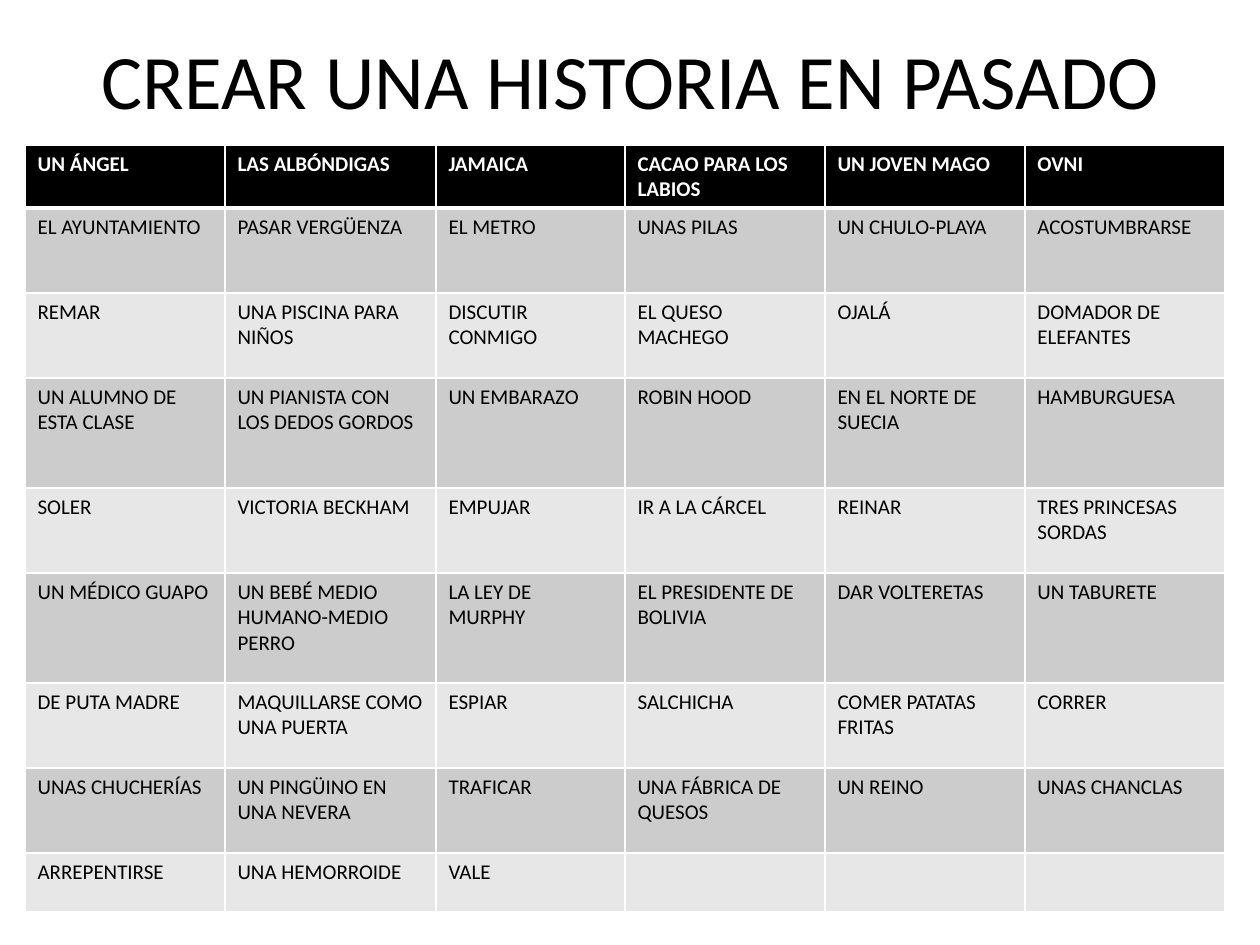
import pptx
import pptx.dml.color
import pptx.enum.text
import pptx.oxml
import pptx.oxml.ns
import pptx.util

PX = 914400 / 126
FONT = "Calibri"
BLACK, WHITE = "000000", "FFFFFF"
BANDS = ["CCCCCC", "E7E7E7"]
COLS = [200, 211, 189, 200, 200, 200]
ROWS = [59, 85, 85, 110, 85, 110, 85, 85, 59]
WORDS = [
    ["UN ÁNGEL", "LAS ALBÓNDIGAS", "JAMAICA",
     "CACAO PARA LOS LABIOS", "UN JOVEN MAGO", "OVNI"],
    ["EL AYUNTAMIENTO", "PASAR VERGÜENZA", "EL METRO",
     "UNAS PILAS", "UN CHULO-PLAYA", "ACOSTUMBRARSE"],
    ["REMAR", "UNA PISCINA PARA NIÑOS", "DISCUTIR CONMIGO",
     "EL QUESO MACHEGO", "OJALÁ", "DOMADOR DE ELEFANTES"],
    ["UN ALUMNO DE ESTA CLASE", "UN PIANISTA CON LOS DEDOS GORDOS", "UN EMBARAZO",
     "ROBIN HOOD", "EN EL NORTE DE SUECIA", "HAMBURGUESA"],
    ["SOLER", "VICTORIA BECKHAM", "EMPUJAR",
     "IR A LA CÁRCEL", "REINAR", "TRES PRINCESAS SORDAS"],
    ["UN MÉDICO GUAPO", "UN BEBÉ MEDIO HUMANO-MEDIO PERRO", "LA LEY DE MURPHY",
     "EL PRESIDENTE DE BOLIVIA", "DAR VOLTERETAS", "UN TABURETE"],
    ["DE PUTA MADRE", "MAQUILLARSE COMO UNA PUERTA", "ESPIAR",
     "SALCHICHA", "COMER PATATAS FRITAS", "CORRER"],
    ["UNAS CHUCHERÍAS", "UN PINGÜINO EN UNA NEVERA", "TRAFICAR",
     "UNA FÁBRICA DE QUESOS", "UN REINO", "UNAS CHANCLAS"],
    ["ARREPENTIRSE", "UNA HEMORROIDE", "VALE", "", "", ""],
]


def emu(px):
    return pptx.util.Emu(round(px * PX))


def rgb(code):
    return pptx.dml.color.RGBColor.from_string(code)


def style(para, size, color, bold=False):
    font = para.font if not para.runs else para.runs[0].font
    font.name = FONT
    font.size = pptx.util.Pt(size)
    font.bold = bold
    font.color.rgb = rgb(color)


def edge(cell, side, width):
    # Borders must come before the fill inside the cell properties
    props = cell._tc.get_or_add_tcPr()
    line = pptx.oxml.parse_xml(
        f'<a:ln{side} {pptx.oxml.ns.nsdecls("a")} w="{pptx.util.Pt(width)}">'
        f'<a:solidFill><a:srgbClr val="{WHITE}"/></a:solidFill></a:ln{side}>')
    props.append(line)


# Heading across the top
def title(slide, left, top, width, height):
    box = slide.shapes.add_textbox(emu(left), emu(top), emu(width), emu(height))
    frame = box.text_frame
    frame.word_wrap = True
    frame.vertical_anchor = pptx.enum.text.MSO_ANCHOR.MIDDLE
    frame.text = "CREAR UNA HISTORIA EN PASADO"
    para = frame.paragraphs[0]
    para.alignment = pptx.enum.text.PP_ALIGN.CENTER
    style(para, 44, BLACK)


# Table of story prompts
def grid(slide, left, top):
    frame = slide.shapes.add_table(len(ROWS), len(COLS), emu(left), emu(top),
                                   emu(sum(COLS)), emu(sum(ROWS)))
    table = frame.table
    for col, width in zip(table.columns, COLS):
        col.width = emu(width)
    for r, (row, height, words) in enumerate(zip(table.rows, ROWS, WORDS)):
        row.height = emu(height)
        head = r == 0
        for cell, word in zip(row.cells, words):
            cell.text = word
            style(cell.text_frame.paragraphs[0], 12, WHITE if head else BLACK, head)
            for side in "LRTB":
                thick = (head and side == "B") or (r == 1 and side == "T")
                edge(cell, side, 3 if thick else 1)
            cell.fill.solid()
            cell.fill.fore_color.rgb = rgb(BLACK if head else BANDS[(r - 1) % 2])


def main():
    deck = pptx.Presentation()
    deck.slide_width, deck.slide_height = emu(1260), emu(945)
    slide = deck.slides.add_slide(deck.slide_layouts[6])
    title(slide, 64, 0, 1134, 158)
    grid(slide, 25, 145)
    deck.save("out.pptx")


if __name__ == "__main__":
    main()
